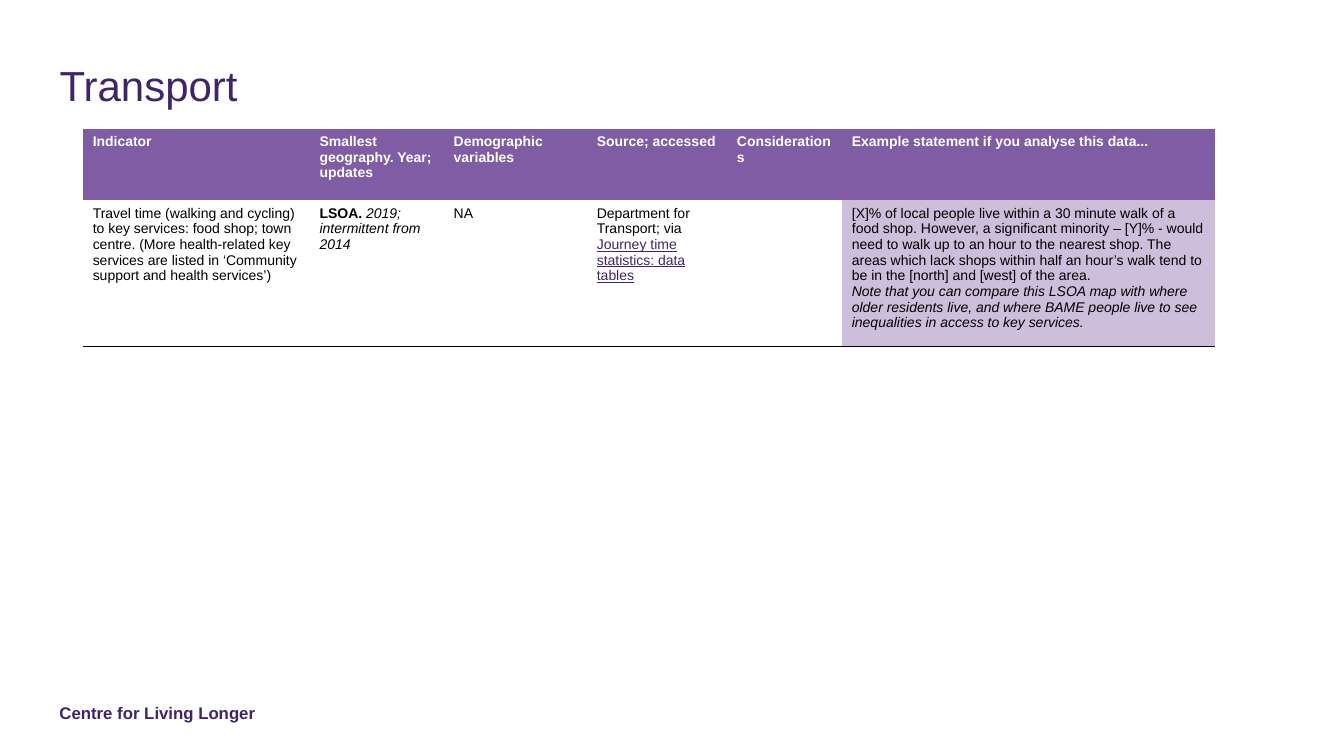
from pptx import Presentation, util as u
from pptx.dml.color import RGBColor
from pptx.enum import text
from lxml import etree

PX = 9144  # EMU in one px, 100 px to the inch
FONT = "Arial"
COLORS = {"plum": "412468", "header": "7F5CA3", "example": "CDBEDB",
          "white": "FFFFFF", "black": "000000"}
NO_GRID_STYLE = "{2D5ABB26-0587-4C30-8999-92F81FD0307C}"
NS = "http://schemas.openxmlformats.org/drawingml/2006/main"

COL_WIDTHS = [225, 133, 142, 139, 114, 370]
HEADERS = ["Indicator", "Smallest geography. Year; updates",
           "Demographic variables", "Source; accessed", "Considerations",
           "Example statement if you analyse this data..."]
# Each cell is a list of paragraphs, each paragraph a list of (words, style).
BODY = [
    [[("Travel time (walking and cycling) to key services: food shop; town "
       "centre. (More health-related key services are listed in ‘Community "
       "support and health services’)", "")]],
    [[("LSOA. ", "bold"), ("2019; intermittent from 2014", "italic")]],
    [[("NA", "")]],
    [[("Department for Transport; via ", ""),
      ("Journey time statistics: data tables", "link")]],
    [],
    [[("[X]% of local people live within a 30 minute walk of a food shop. "
       "However, a significant minority – [Y]% - would need to walk up to an "
       "hour to the nearest shop. The areas which lack shops within half an "
       "hour’s walk tend to be in the [north] and [west] of the area.", "")],
     [("Note that you can compare this LSOA map with where older residents "
       "live, and where BAME people live to see inequalities in access to "
       "key services.", "italic")]],
]


def px(n):
    return u.Emu(n * PX)


def rgb(name):
    return RGBColor.from_string(COLORS[name])


def format_run(r, size, color, style=""):
    f = r.font
    f.name, f.size, f.color.rgb = FONT, u.Pt(size), rgb(color)
    f.bold, f.italic = style == "bold", style == "italic"
    f.underline = style == "link"


def clear_margins(tf):
    tf.margin_left = tf.margin_top = tf.margin_right = tf.margin_bottom = 0
    tf.vertical_anchor = text.MSO_ANCHOR.TOP
    tf.word_wrap = True


def add_title(s, words, x, y, w, h):
    sp = s.shapes.title
    sp.left, sp.top, sp.width, sp.height = map(px, (x, y, w, h))
    tf = sp.text_frame
    tf.text = words
    clear_margins(tf)
    tf.auto_size = text.MSO_AUTO_SIZE.NONE
    p = tf.paragraphs[0]
    p.alignment, p.line_spacing = text.PP_ALIGN.LEFT, u.Pt(36)
    format_run(p.runs[0], 30, "plum")


def add_footer(s, words, x, y, w, h):
    tf = s.shapes.add_textbox(*map(px, (x, y, w, h))).text_frame
    tf.text = words
    clear_margins(tf)
    format_run(tf.paragraphs[0].runs[0], 12, "plum", "bold")


def add_bottom_border(cell):
    ln = etree.fromstring(
        f'<a:lnB xmlns:a="{NS}" w="{u.Pt(0.25)}"><a:solidFill>'
        f'<a:srgbClr val="{COLORS["black"]}"/></a:solidFill></a:lnB>')
    cell._tc.get_or_add_tcPr().insert(0, ln)


def fill_cell(cell, color):
    cell.fill.solid()
    cell.fill.fore_color.rgb = rgb(color)


def fill_header(cell, words):
    cell.text = words
    format_run(cell.text_frame.paragraphs[0].runs[0], 10, "white", "bold")
    fill_cell(cell, "header")


def fill_body(cell, paragraphs):
    cell.margin_top = cell.margin_bottom = px(6)
    tf = cell.text_frame
    for i, runs in enumerate(paragraphs):
        p = tf.add_paragraph() if i else tf.paragraphs[0]
        for words, style in runs:
            r = p.add_run()
            r.text = words
            format_run(r, 10, "plum" if style == "link" else "black", style)
    cell.fill.background()
    add_bottom_border(cell)


def add_indicator_table(s, x, y, row_heights):
    table = s.shapes.add_table(
        2, len(HEADERS), px(x), px(y),
        px(sum(COL_WIDTHS)), px(sum(row_heights))).table
    table.first_row = table.horz_banding = False
    table._tbl.tblPr.find(f"{{{NS}}}tableStyleId").text = NO_GRID_STYLE
    for row, h in zip(table.rows, row_heights):
        row.height = px(h)
    for i, (w, header, body) in enumerate(zip(COL_WIDTHS, HEADERS, BODY)):
        table.columns[i].width = px(w)
        fill_header(table.cell(0, i), header)
        fill_body(table.cell(1, i), body)
    fill_cell(table.cell(1, len(HEADERS) - 1), "example")


def main():
    prs = Presentation()
    prs.slide_width, prs.slide_height = px(1333), px(750)
    s = prs.slides.add_slide(prs.slide_layouts[5])
    add_footer(s, "Centre for Living Longer", 59, 697, 356, 20)
    add_title(s, "Transport", 59, 59, 1215, 113)
    add_indicator_table(s, 82, 128, [70, 136])
    prs.save("out.pptx")


if __name__ == "__main__":
    main()
